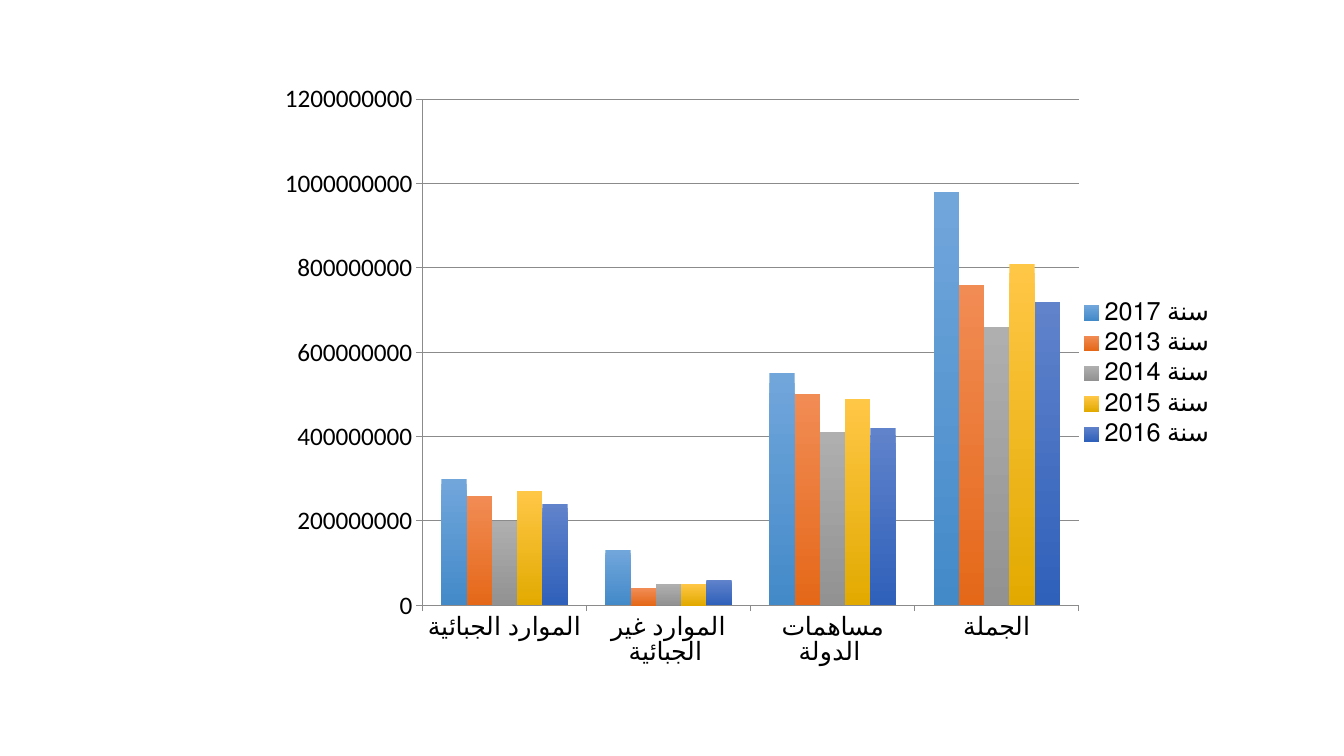
from dataclasses import dataclass

from lxml import etree
from pptx import Presentation
from pptx.chart.chart import Chart
from pptx.chart.data import CategoryChartData
from pptx.chart.series import BarSeries
from pptx.dml.color import RGBColor
from pptx.enum.chart import XL_CHART_TYPE, XL_LEGEND_POSITION, XL_TICK_MARK
from pptx.oxml.ns import qn
from pptx.util import Cm, Pt

CLUSTERED = XL_CHART_TYPE.COLUMN_CLUSTERED
LEGEND_RIGHT = XL_LEGEND_POSITION.RIGHT
TICK_OUTSIDE = XL_TICK_MARK.OUTSIDE
TICK_NONE = XL_TICK_MARK.NONE

BLACK = RGBColor(0x00, 0x00, 0x00)
AXIS_GRAY = RGBColor(0x8B, 0x8B, 0x8B)
BLUE_TOP, BLUE_BOTTOM = RGBColor(0x71, 0xA6, 0xDB), RGBColor(0x43, 0x8A, 0xC9)
ORANGE_TOP, ORANGE_BOTTOM = RGBColor(0xF1, 0x8C, 0x55), RGBColor(0xE5, 0x68, 0x18)
GRAY_TOP, GRAY_BOTTOM = RGBColor(0xAF, 0xAF, 0xAF), RGBColor(0x92, 0x92, 0x92)
GOLD_TOP, GOLD_BOTTOM = RGBColor(0xFF, 0xC7, 0x46), RGBColor(0xE2, 0xAA, 0x00)
NAVY_TOP, NAVY_BOTTOM = RGBColor(0x60, 0x83, 0xCB), RGBColor(0x2F, 0x60, 0xBA)

MILLION = 1_000_000
CATEGORIES = ["الموارد الجبائية ", "الموارد غير الجبائية ", "مساهمات الدولة ", "الجملة"]


@dataclass(frozen=True)
class YearSeries:
    name: str
    millions: tuple[int, ...]
    top: RGBColor
    bottom: RGBColor


YEARS = [
    YearSeries("سنة 2017", (300, 130, 550, 980), BLUE_TOP, BLUE_BOTTOM),
    YearSeries("سنة 2013", (260, 40, 500, 760), ORANGE_TOP, ORANGE_BOTTOM),
    YearSeries("سنة 2014", (200, 50, 410, 660), GRAY_TOP, GRAY_BOTTOM),
    YearSeries("سنة 2015", (270, 50, 490, 810), GOLD_TOP, GOLD_BOTTOM),
    YearSeries("سنة 2016", (240, 60, 420, 720), NAVY_TOP, NAVY_BOTTOM),
]


def build_chart_data() -> CategoryChartData:
    chart_data = CategoryChartData(number_format="0")
    chart_data.categories = CATEGORIES
    for year in YEARS:
        chart_data.add_series(year.name, [value * MILLION for value in year.millions])
    return chart_data


def fill_columns(series: BarSeries, year: YearSeries) -> None:
    fill = series.format.fill
    fill.gradient()
    fill.gradient_angle = 270
    for stop, color in zip(fill.gradient_stops, (year.top, year.bottom)):
        stop.color.rgb = color


def format_axes(chart: Chart) -> None:
    for axis in (chart.category_axis, chart.value_axis):
        axis.major_tick_mark = TICK_OUTSIDE
        axis.minor_tick_mark = TICK_NONE
        axis.format.line.color.rgb = AXIS_GRAY
        axis.format.line.width = Pt(0.75)
    value_axis = chart.value_axis
    value_axis.minimum_scale = 0
    value_axis.maximum_scale = 1200 * MILLION
    value_axis.major_unit = 200 * MILLION
    value_axis.has_major_gridlines = True
    value_axis.major_gridlines.format.line.color.rgb = AXIS_GRAY
    value_axis.major_gridlines.format.line.width = Pt(0.75)
    value_axis.tick_labels.number_format = "0"
    value_axis.tick_labels.number_format_is_linked = False


def place_plot(chart: Chart, x: float, y: float, width: float, height: float) -> None:
    plot_area = chart.plots[0]._element.getparent()
    for old_layout in plot_area.findall(qn("c:layout")):
        plot_area.remove(old_layout)
    layout = etree.Element(qn("c:layout"))
    manual = etree.SubElement(layout, qn("c:manualLayout"))
    settings = {
        "layoutTarget": "inner", "xMode": "edge", "yMode": "edge",
        "x": x, "y": y, "w": width, "h": height,
    }
    for tag, value in settings.items():
        etree.SubElement(manual, qn(f"c:{tag}")).set("val", str(value))
    plot_area.insert(0, layout)


def main() -> None:
    presentation = Presentation()
    presentation.slide_width = Cm(33.87)
    presentation.slide_height = Cm(19.05)
    slide = presentation.slides.add_slide(presentation.slide_layouts[6])

    frame = slide.shapes.add_chart(
        CLUSTERED, Cm(6.2), Cm(1.73), Cm(24.69), Cm(15.37), build_chart_data()
    )
    chart = frame.chart
    chart.has_title = False
    chart.font.name = "Calibri"
    chart.font.size = Pt(18)
    chart.font.color.rgb = BLACK
    chart.has_legend = True
    chart.legend.position = LEGEND_RIGHT
    chart.legend.include_in_layout = False

    plot = chart.plots[0]
    plot.gap_width = 150
    plot.overlap = 0
    plot.vary_by_categories = False
    for series, year in zip(plot.series, YEARS):
        fill_columns(series, year)
    format_axes(chart)
    place_plot(chart, 0.18, 0.05, 0.67, 0.83)

    presentation.save("out.pptx")


if __name__ == "__main__":
    main()
